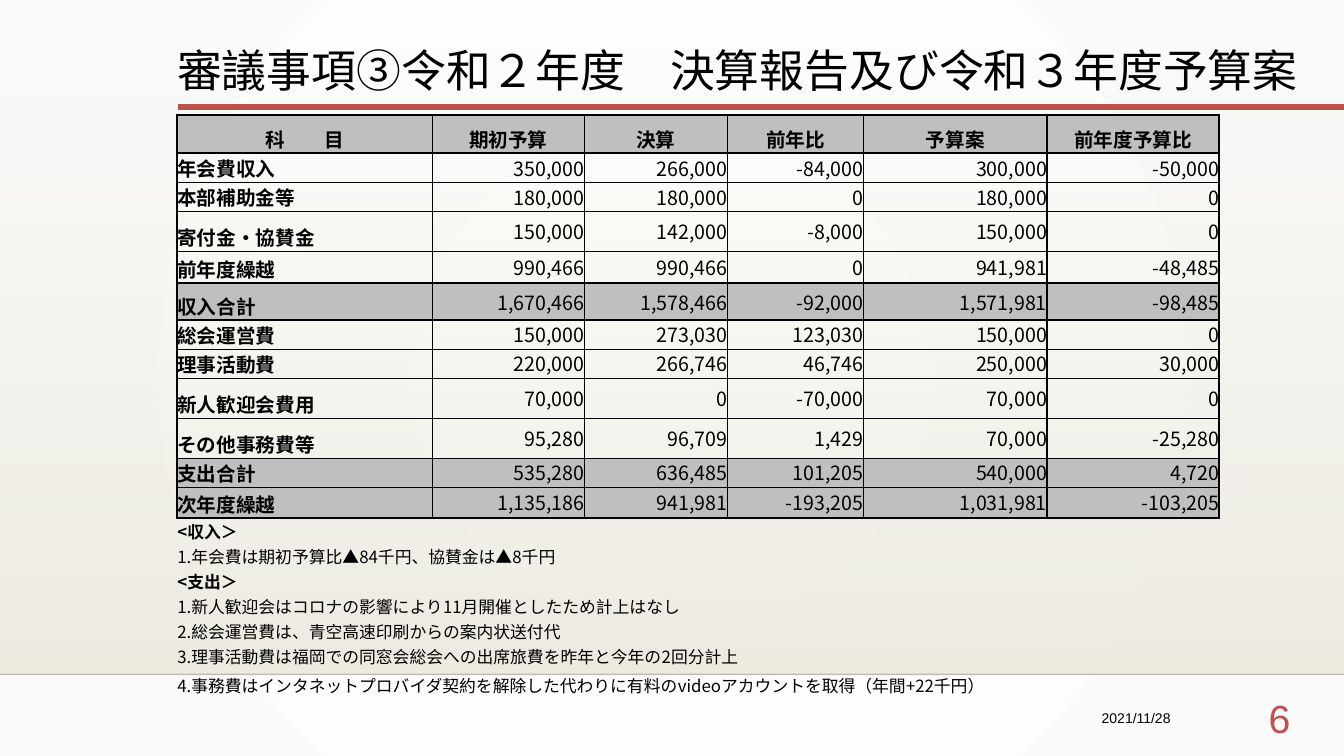
from lxml import etree
from pptx import Presentation
from pptx.dml.color import RGBColor
from pptx.enum import shapes, text
from pptx.oxml.ns import qn
from pptx.util import Pt

TITLE = "審議事項③令和２年度　決算報告及び令和３年度予算案"
DATE, PAGE = "2021/11/28", "6"

HEADER = ("科　　目", "期初予算", "決算", "前年比", "予算案", "前年度予算比")
BLANK = ("",) * len(HEADER)
# Each row: height, then cell texts
BUDGET = [
    (22, BLANK),
    (27, HEADER),
    (20.7, ("年会費収入", "350,000", "266,000", "-84,000", "300,000", "-50,000")),
    (20.7, ("本部補助金等", "180,000", "180,000", "0", "180,000", "0")),
    (28.6, ("寄付金・協賛金", "150,000", "142,000", "-8,000", "150,000", "0")),
    (22.9, ("前年度繰越", "990,466", "990,466", "0", "941,981", "-48,485")),
    (26.4, ("収入合計", "1,670,466", "1,578,466", "-92,000", "1,571,981", "-98,485")),
    (20.7, ("総会運営費", "150,000", "273,030", "123,030", "150,000", "0")),
    (20.7, ("理事活動費", "220,000", "266,746", "46,746", "250,000", "30,000")),
    (28.6, ("新人歓迎会費用", "70,000", "0", "-70,000", "70,000", "0")),
    (28.6, ("その他事務費等", "95,280", "96,709", "1,429", "70,000", "-25,280")),
    (20.7, ("支出合計", "535,280", "636,485", "101,205", "540,000", "4,720")),
    (22.3, ("次年度繰越", "1,135,186", "941,981", "-193,205", "1,031,981", "-103,205")),
    (14.4, BLANK),
]
BUDGET_WIDTHS = (182.2, 108.7, 102.2, 97.2, 131, 123.1)
SHADED_ROWS = {1, 6, 11, 12}
HEAVY_RULES = {1, 2, 6, 7, 13}  # rows with a thick rule above them
COLUMN_RULES = (1.5, 1, 1, 1.5, 1.5, 1.5, 1.5)

NOTES = [
    "<収入＞",
    "1.年会費は期初予算比▲84千円、協賛金は▲8千円",
    "<支出＞",
    "1.新人歓迎会はコロナの影響により11月開催としたため計上はなし",
    "2.総会運営費は、青空高速印刷からの案内状送付代",
    "3.理事活動費は福岡での同窓会総会への出席旅費を昨年と今年の2回分計上",
    "4.事務費はインタネットプロバイダ契約を解除した代わりに有料のvideoアカウントを取得（年間+22千円）",
]
NOTE_HEIGHTS = [17.85] * (len(NOTES) - 1) + [23.8]
NOTE_WIDTHS = (164.9, 109.4, 126, 106.6, 141.1, 121.7)
SPLIT_NOTE_ROW = 2

THEME = {
    "latin": "Arial", "asian": "Noto Sans CJK JP",
    "ink": "000000", "accent": "C0504D", "shade": "BFBFBF", "edge": "000001",
    "page": ("FFFFFF", "FAFAFA"), "band": ("EEECE1", "EFEDE3"),
    "title": 32, "page_number": 28, "date": 10, "table": 14, "note": 12,
}
NO_STYLE = "{2D5ABB26-0587-4C30-8999-92F81FD0307C}"
ALIGN, ANCHOR = text.PP_ALIGN, text.MSO_ANCHOR


def rgb(name):
    return RGBColor.from_string(name)


def set_alpha(element, percent):
    for color in element.iter(qn("a:srgbClr")):
        etree.SubElement(color, qn("a:alpha")).set("val", str(percent * 1000))


def set_gradient(fill, colors):
    fill.gradient()
    for stop, color, position in zip(fill.gradient_stops, colors, (0, 1)):
        stop.color.rgb = rgb(color)
        stop.position = position


def write(paragraph, words, size, face, color="ink", bold=False, **formats):
    for name, value in formats.items():
        setattr(paragraph, name, value)
    if not words:
        etree.SubElement(paragraph._p, qn("a:endParaRPr")).set("sz", str(size * 100))
        return
    run = paragraph.add_run()
    run.text = words
    values = {"size": Pt(size), "name": THEME[face], "bold": bold}
    for name, value in values.items():
        setattr(run.font, name, value)
    run.font.color.rgb = rgb(THEME[color])
    asian = etree.SubElement(run.font._element, qn("a:ea"))
    asian.set("typeface", THEME["asian"])


def add_text(slide, box, words, size, anchor=ANCHOR.TOP, **formats):
    frame = slide.shapes.add_textbox(*map(Pt, box)).text_frame
    frame.word_wrap = True
    frame.vertical_anchor = anchor
    write(frame.paragraphs[0], words, THEME[size], "latin", **formats)


def add_rule(slide, left, top, color, width):
    line = slide.shapes.add_connector(
        shapes.MSO_CONNECTOR.STRAIGHT, Pt(left), Pt(top), Pt(960), Pt(top))
    line.line.color.rgb = rgb(THEME[color])
    line.line.width = Pt(width)
    etree.SubElement(line._element.spPr, qn("a:effectLst"))
    return line


def add_table(slide, left, top, widths, heights):
    table = slide.shapes.add_table(
        len(heights), len(widths), Pt(left), Pt(top), Pt(sum(widths)), Pt(sum(heights))).table
    table.first_row = table.horz_banding = False
    table._tbl.tblPr.find(qn("a:tableStyleId")).text = NO_STYLE
    for column, width in zip(table.columns, widths):
        column.width = Pt(width)
    for row, height in zip(table.rows, heights):
        row.height = Pt(height)
    return table


def set_cell(cell, words, size, anchor, margin, shaded=False, **formats):
    for side in ("left", "top", "right", "bottom"):
        setattr(cell, f"margin_{side}", Pt(0 if side == "bottom" else margin))
    cell.vertical_anchor = anchor
    if shaded:
        cell.fill.solid()
        cell.fill.fore_color.rgb = rgb(THEME["shade"])
    else:
        cell.fill.background()
    write(cell.text_frame.paragraphs[0], words, THEME[size], "asian", **formats)


def set_borders(cell, borders):
    properties = cell._tc.get_or_add_tcPr()
    for index, (side, width) in enumerate(borders.items()):
        line = etree.Element(qn(f"a:ln{side}"), w=str(int(Pt(width))))
        if width:
            fill = etree.SubElement(line, qn("a:solidFill"))
            etree.SubElement(fill, qn("a:srgbClr")).set("val", THEME["ink"])
        else:
            etree.SubElement(line, qn("a:noFill"))
        properties.insert(index, line)


def rule_above(row):
    if row in (0, len(BUDGET)):
        return 0
    return 1.5 if row in HEAVY_RULES else 0.5


def add_budget(slide):
    table = add_table(slide, 126.6, 60.3, BUDGET_WIDTHS, [height for height, _ in BUDGET])
    for row, (_, values) in enumerate(BUDGET):
        blank, header = values is BLANK, values is HEADER
        for column, words in enumerate(values):
            label = column == 0
            align = ALIGN.CENTER if header else ALIGN.JUSTIFY if label else ALIGN.RIGHT
            cell = table.cell(row, column)
            set_cell(cell, words, "table", ANCHOR.BOTTOM if header or label else ANCHOR.MIDDLE,
                     0, row in SHADED_ROWS, bold=header or label, alignment=align)
            set_borders(cell, {
                "L": 0 if blank else COLUMN_RULES[column],
                "R": 0 if blank else COLUMN_RULES[column + 1],
                "T": rule_above(row), "B": rule_above(row + 1)})
        if blank:
            table.cell(row, 0).merge(table.cell(row, len(values) - 1))


def add_notes(slide):
    table = add_table(slide, 126, 370.1, NOTE_WIDTHS, NOTE_HEIGHTS)
    last = len(NOTE_WIDTHS) - 1
    for row, note in enumerate(NOTES):
        for column in range(last + 1):
            set_cell(table.cell(row, column), "" if column else note, "note",
                     ANCHOR.MIDDLE, 0.7, bold=note.startswith("<"))
        if row != SPLIT_NOTE_ROW:
            table.cell(row, 0).merge(table.cell(row, last))


def main():
    presentation = Presentation()
    presentation.slide_width, presentation.slide_height = Pt(960), Pt(540)
    slide = presentation.slides.add_slide(presentation.slide_layouts[6])

    # Background: round glow
    set_gradient(slide.background.fill, THEME["page"])
    gradient = next(slide._element.iter(qn("a:gradFill")))
    gradient.remove(gradient.find(qn("a:lin")))
    glow = etree.SubElement(gradient, qn("a:path"))
    glow.set("path", "circle")
    etree.SubElement(glow, qn("a:fillToRect"), {side: "50000" for side in "ltrb"})

    # Fading band and rules
    band = slide.shapes.add_shape(
        shapes.MSO_SHAPE.RECTANGLE, 0, Pt(36.7), Pt(960), Pt(445))
    band.shadow.inherit = False
    band.line.fill.background()
    set_gradient(band.fill, THEME["band"])
    band.fill.gradient_angle = 270
    set_alpha(next(band._element.iter(qn("a:gs"))), 0)
    set_alpha(add_rule(slide, 0, 481.7, "edge", 1)._element, 20)
    add_rule(slide, 127.4, 76.3, "accent", 4.25)

    # Footer and title
    add_text(slide, (645.1, 500.4, 198, 24.5), DATE, "date", ANCHOR.MIDDLE,
             alignment=ALIGN.RIGHT)
    add_text(slide, (864.7, 492.5, 64.1, 39.6), PAGE, "page_number",
             color="accent", alignment=ALIGN.RIGHT)
    add_text(slide, (119.5, 31, 833, 82.8), TITLE, "title", line_spacing=0.9)

    # Tables
    add_budget(slide)
    add_notes(slide)
    presentation.save("out.pptx")


if __name__ == "__main__":
    main()
